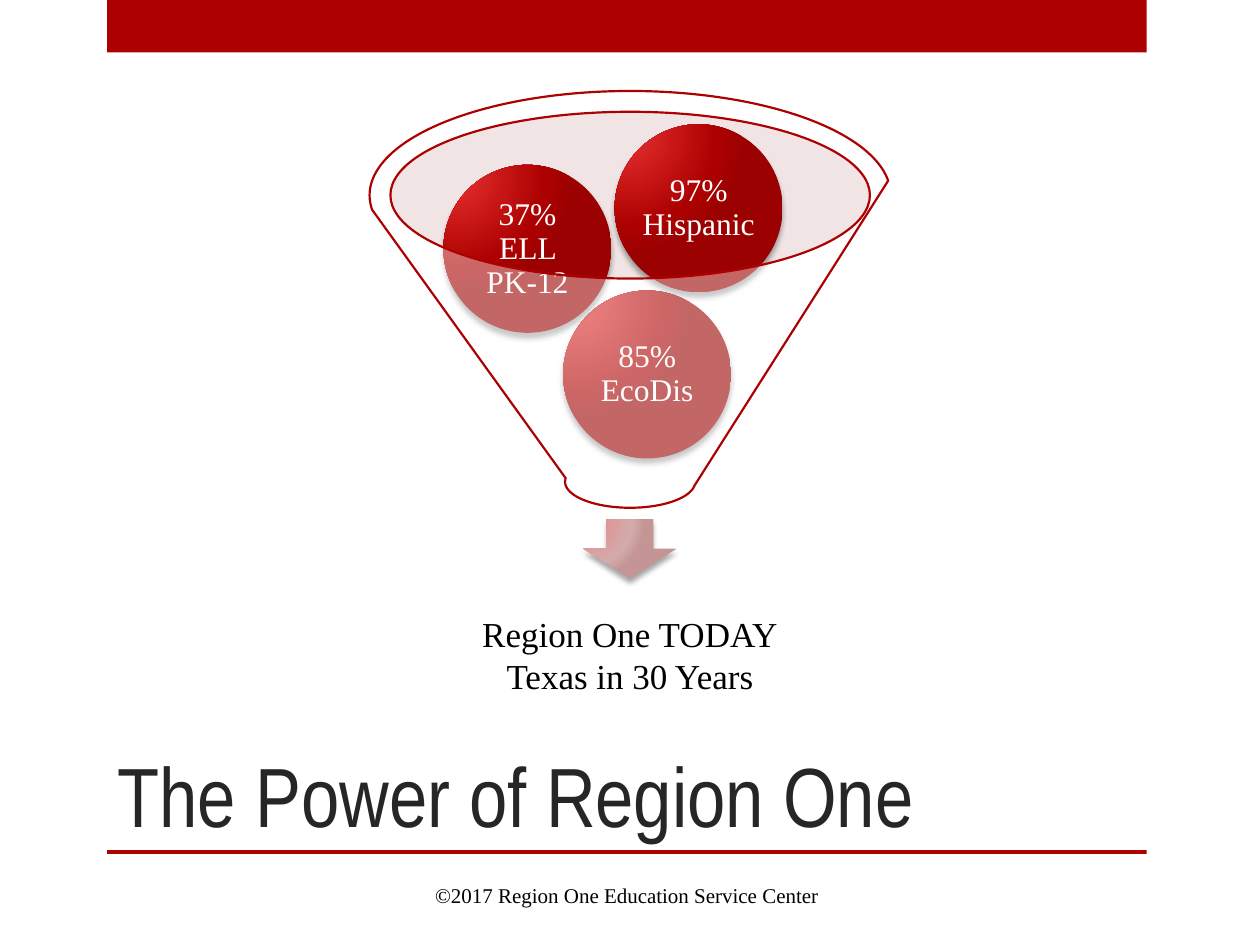
from lxml import etree
from pptx import Presentation
from pptx.dml.color import RGBColor
from pptx.enum.shapes import MSO_SHAPE as Geo
from pptx.enum.text import MSO_ANCHOR as Anchor, PP_ALIGN as Align
from pptx.oxml import parse_xml
from pptx.oxml.ns import nsdecls, qn
from pptx.util import Pt

RED = RGBColor(0xAD, 0x01, 0x01)
PINK = RGBColor(0xDB, 0xBD, 0xBD)
WHITE = RGBColor(0xFF, 0xFF, 0xFF)
BLACK = RGBColor(0, 0, 0)
DARK = RGBColor(0x26, 0x26, 0x26)
BALL = [RGBColor(0xE6, 0x2F, 0x2F), RED, RGBColor(0x9C, 0x01, 0x01)]
ARROW = [RGBColor(0xE6, 0x89, 0x89), RGBColor(0xD3, 0xAB, 0xAB),
         RGBColor(0xC3, 0x95, 0x95)]
SERIF = "Times New Roman"


def write(shape, text, size, color, font=SERIF, align=Align.CENTER,
          anchor=Anchor.MIDDLE, space=None, inset=None):
    frame = shape.text_frame
    frame.word_wrap = True
    frame.vertical_anchor = anchor
    if inset is not None:
        frame.margin_left = frame.margin_right = Pt(inset)
        frame.margin_top = frame.margin_bottom = Pt(inset)
    frame.text = text
    for para in frame.paragraphs:
        para.alignment = align
        if space:
            para.line_spacing = space
        para.font.size = Pt(size)
        para.font.name = font
        para.font.color.rgb = color


def draw(geo, left, top, width, height, fill=None, alpha=None, grad=None):
    shape = slide.shapes.add_shape(geo, Pt(left), Pt(top), Pt(width), Pt(height))
    shape.shadow.inherit = False
    shape.line.fill.background()
    props = shape.element.spPr
    if fill is not None:
        shape.fill.solid()
        shape.fill.fore_color.rgb = fill
    if alpha:
        tint = props.find(qn("a:solidFill")).find(qn("a:srgbClr"))
        etree.SubElement(tint, qn("a:alpha"), val=str(alpha * 1000))
    if grad:
        stops = "".join(
            f'<a:gs pos="{pos}000"><a:srgbClr val="{color}"/></a:gs>'
            for pos, color in zip((0, 76, 100), grad))
        props.insert(2, parse_xml(
            f'<a:gradFill {nsdecls("a")} rotWithShape="1"><a:gsLst>{stops}</a:gsLst>'
            '<a:path path="circle"><a:fillToRect l="15000" t="15000" '
            'r="100000" b="100000"/></a:path></a:gradFill>'))
        props.find(qn("a:effectLst")).append(parse_xml(
            f'<a:outerShdw {nsdecls("a")} blurRad="{Pt(3)}" dist="{Pt(3)}" '
            'dir="5400000" rotWithShape="0"><a:srgbClr val="000000">'
            '<a:alpha val="35000"/></a:srgbClr></a:outerShdw>'))
    return shape


deck = Presentation()
deck.slide_width, deck.slide_height = Pt(720), Pt(540)
slide = deck.slides.add_slide(deck.slide_layouts[5])

# Top band and rule under the title
for top, height in ((0, 30), (485.8, 2.2)):
    draw(Geo.RECTANGLE, 61.2, top, 594, height, fill=RED)

# Title
title = slide.shapes.title
title.left, title.top, title.width, title.height = Pt(60), Pt(360), Pt(534), Pt(126)
write(title, "The Power of Region One", 48, DARK, font="Arial Narrow",
      align=Align.LEFT, anchor=Anchor.BOTTOM)

# Funnel mouth and arrow
draw(Geo.OVAL, 222.8, 63.4, 274.3, 95.2, fill=PINK, alpha=40)
draw(Geo.DOWN_ARROW, 333.4, 296.6, 53.2, 34, grad=ARROW)

# Balls, with insets narrow enough for the longest word
for left, top, text in ((321.8, 166, "85% EcoDis"),
                        (253.4, 94.2, "37% ELL PK-12"),
                        (351.2, 71, "97% Hispanic")):
    ball = draw(Geo.OVAL, left, top, 96, 96, grad=BALL)
    write(ball, text, 18, WHITE, space=0.9, inset=1)

# Funnel, over the balls
funnel = draw(Geo.FUNNEL, 211.2, 52, 297.8, 238.2, fill=WHITE, alpha=40)
funnel.line.color.rgb = RED
funnel.line.width = Pt(1.25)

# Caption and footer
for left, top, width, height, text, size, anchor in (
        (244, 346.3, 232, 55.4, "Region One TODAY\nTexas in 30 Years", 20,
         Anchor.TOP),
        (62.8, 497.2, 591, 28.8, "©2017 Region One Education Service Center", 12,
         Anchor.MIDDLE)):
    box = slide.shapes.add_textbox(Pt(left), Pt(top), Pt(width), Pt(height))
    write(box, text, size, BLACK, anchor=anchor)

deck.save("out.pptx")
